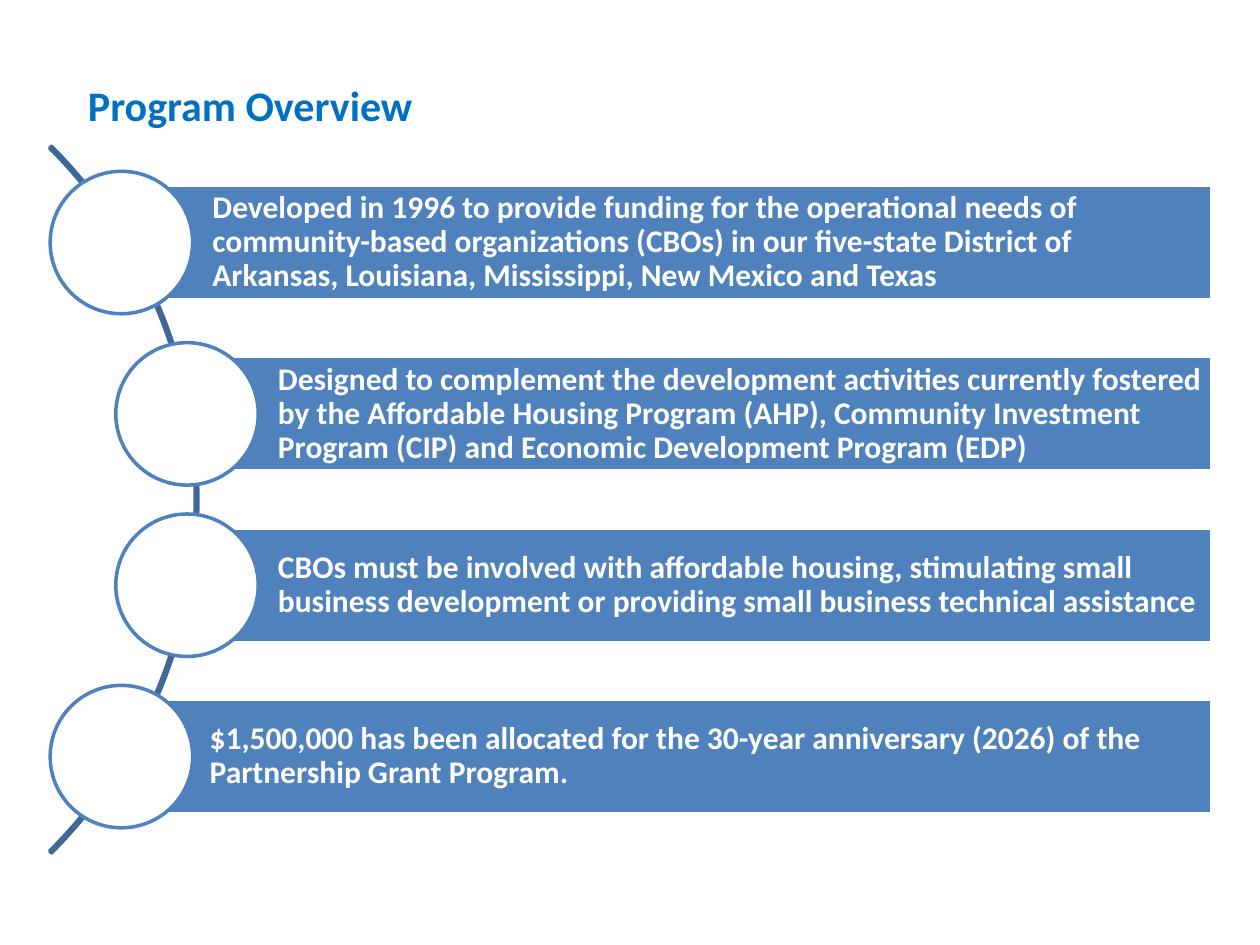
from pptx import Presentation
from pptx.dml.color import RGBColor
from pptx.enum.shapes import MSO_SHAPE
from pptx.enum.text import MSO_ANCHOR, PP_ALIGN
from pptx.util import Pt

TITLE_BLUE = RGBColor(0x00, 0x70, 0xC0)
BAR_BLUE = RGBColor(0x4F, 0x81, 0xBD)
ARC_BLUE = RGBColor(0x3F, 0x67, 0x97)
WHITE = RGBColor(0xFF, 0xFF, 0xFF)

# Layout in points
ARC_LEFT, ARC_SIZE = -457.9, 571
CIRCLE_TOP, CIRCLE_SIZE, STEP = 97.9, 81.4, 97.92
BAR_HEIGHT, BAR_RIGHT = 65.5, 692.3
OUTER, INNER = 28.7, 66.2

# Circle left, text inset, wording
ITEMS = [
    (OUTER, 52, "Developed in 1996 to provide funding for the operational needs of "
     "community-based organizations (CBOs) in our five-state District of "
     "Arkansas, Louisiana, Mississippi, New Mexico and Texas"),
    (INNER, 52, "Designed to complement the development activities currently fostered "
     "by the Affordable Housing Program (AHP), Community Investment "
     "Program (CIP) and Economic Development Program (EDP)"),
    (INNER, 52, "CBOs must be involved with affordable housing, stimulating small "
     "business development or providing small business technical assistance"),
    (OUTER, 50.4, "$1,500,000 has been allocated for the 30-year anniversary (2026) of the "
     "Partnership Grant Program."),
]


def set_all(obj, values):
    for name, value in values.items():
        setattr(obj, name, value)


class Deck:
    FONT = {"name": "Calibri", "bold": True}

    def __init__(self, slide):
        self.s = slide

    def add_text(self, sp, text, size, color, insets, spacing=1.0):
        tf = sp.text_frame
        left, top, right, bottom = (Pt(v) for v in insets)
        set_all(tf, {"word_wrap": True, "vertical_anchor": MSO_ANCHOR.MIDDLE,
                     "margin_left": left, "margin_top": top,
                     "margin_right": right, "margin_bottom": bottom})
        p = tf.paragraphs[0]
        set_all(p, {"alignment": PP_ALIGN.LEFT, "line_spacing": spacing})
        r = p.add_run()
        r.text = text
        set_all(r.font, {**self.FONT, "size": Pt(size)})
        r.font.color.rgb = color

    def title(self, text, *box):
        sp = self.s.shapes.add_textbox(*map(Pt, box))
        self.add_text(sp, text, 24, TITLE_BLUE, (7.2, 0, 7.2, 0))

    def shape(self, kind, box, fill, line):
        sp = self.s.shapes.add_shape(kind, *map(Pt, box))
        sp.shadow.inherit = False
        if fill is None:
            sp.fill.background()
        else:
            sp.fill.solid()
            sp.fill.fore_color.rgb = fill
        sp.line.color.rgb = line
        sp.line.width = Pt(2)
        return sp

    def arc(self, left, top, size):
        sp = self.shape(MSO_SHAPE.BLOCK_ARC, (left, top, size, size), None, ARC_BLUE)
        # Start angle, end angle (315 and 45 degrees), thickness
        for i, value in enumerate((189, 27, 0.0027)):
            sp.adjustments[i] = value

    def bar(self, text, inset, *box):
        sp = self.shape(MSO_SHAPE.RECTANGLE, box, BAR_BLUE, WHITE)
        self.add_text(sp, text, 18, WHITE, (inset, 3.6, 3.6, 3.6), 0.9)

    def circle(self, left, top, size):
        self.shape(MSO_SHAPE.OVAL, (left, top, size, size), WHITE, BAR_BLUE)


def main():
    prs = Presentation()
    set_all(prs, {"slide_width": Pt(720), "slide_height": Pt(540)})
    deck = Deck(prs.slides.add_slide(prs.slide_layouts[6]))

    # Heading and curved spine
    deck.title("Program Overview", 43.2, 46.1, 441.4, 27.4)
    deck.arc(ARC_LEFT, 0, ARC_SIZE)

    # Each bar starts at the centre of its circle
    for i, (left, inset, text) in enumerate(ITEMS):
        top = CIRCLE_TOP + i * STEP
        bar_left = left + CIRCLE_SIZE / 2
        bar_top = top + (CIRCLE_SIZE - BAR_HEIGHT) / 2
        deck.bar(text, inset, bar_left, bar_top, BAR_RIGHT - bar_left, BAR_HEIGHT)
        deck.circle(left, top, CIRCLE_SIZE)

    prs.save("out.pptx")


if __name__ == "__main__":
    main()
